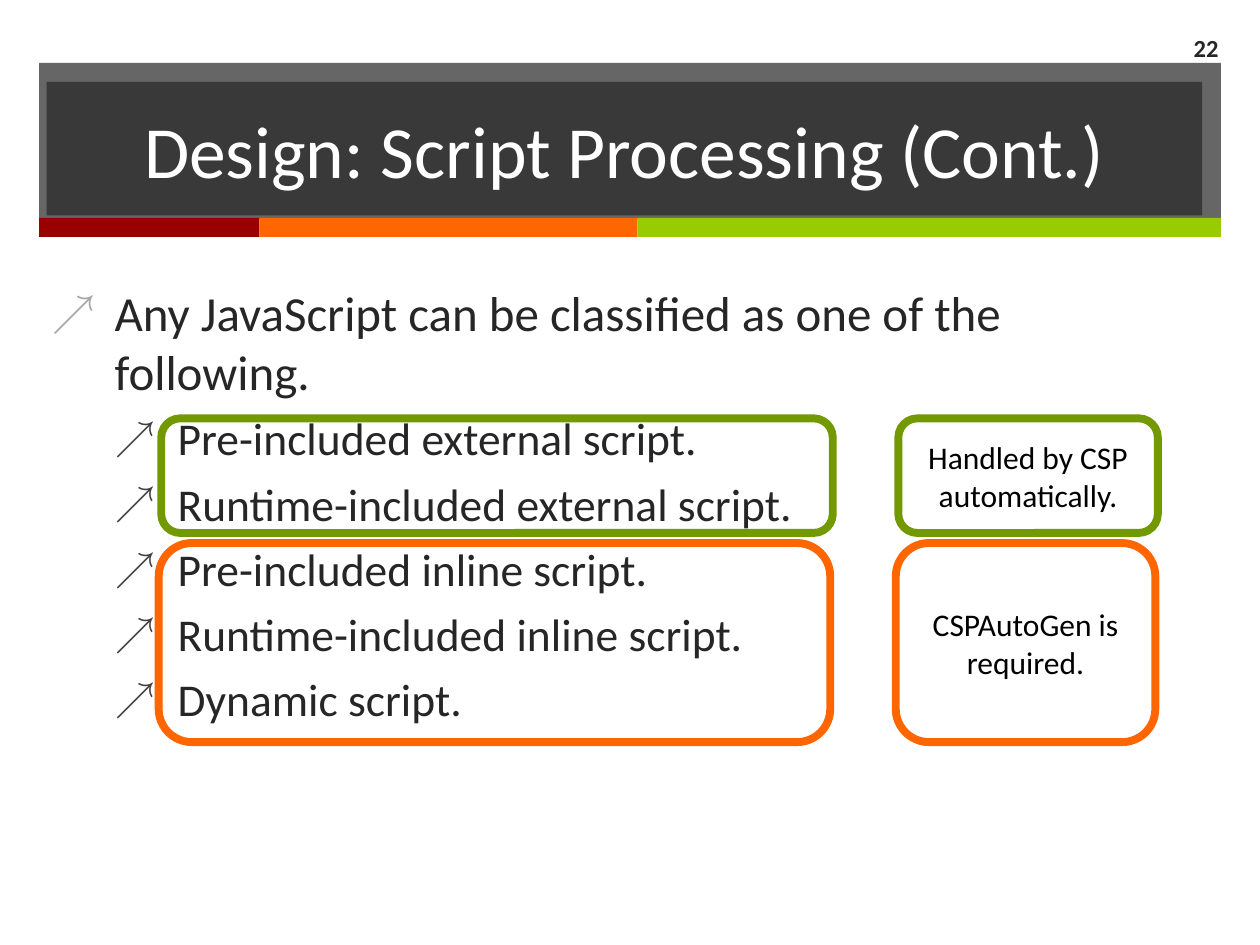
from lxml import etree
from pptx import Presentation
from pptx.dml.color import RGBColor
from pptx.enum.shapes import MSO_SHAPE
from pptx.enum.text import MSO_ANCHOR, MSO_AUTO_SIZE, PP_ALIGN
from pptx.oxml.ns import qn
from pptx.util import Inches, Pt

RECTANGLE, ROUNDED = MSO_SHAPE.RECTANGLE, MSO_SHAPE.ROUNDED_RECTANGLE
MIDDLE, TOP = MSO_ANCHOR.MIDDLE, MSO_ANCHOR.TOP
CENTER, LEFT, RIGHT = PP_ALIGN.CENTER, PP_ALIGN.LEFT, PP_ALIGN.RIGHT
NO_FIT = MSO_AUTO_SIZE.NONE

FONT = "Calibri"
INK = RGBColor(0x26, 0x26, 0x26)
WHITE = RGBColor(0xFF, 0xFF, 0xFF)
BLACK = RGBColor(0x00, 0x00, 0x00)
RED = RGBColor(0x99, 0x00, 0x00)
ORANGE = RGBColor(0xFF, 0x66, 0x00)
LIME = RGBColor(0x99, 0xCC, 0x00)
GREEN = RGBColor(0x73, 0x99, 0x00)
PALE_BULLET = RGBColor(0xA6, 0xA6, 0xA6)
DARK_BULLET = RGBColor(0x40, 0x40, 0x40)

INTRO = "Any JavaScript can be classified as one of the following."
SCRIPT_KINDS = [
    "Pre-included external script.",
    "Runtime-included external script.",
    "Pre-included inline script.",
    "Runtime-included inline script.",
    "Dynamic script.",
]


def place(shape, left, top, width, height):
    shape.left, shape.top = Inches(left), Inches(top)
    shape.width, shape.height = Inches(width), Inches(height)


def set_frame(shape, anchor):
    frame = shape.text_frame
    frame.word_wrap = True
    frame.auto_size = NO_FIT
    frame.vertical_anchor = anchor
    return frame


def style_paragraph(para, size, color, align, bold=False):
    para.alignment = align
    para.font.name = FONT
    para.font.size = Pt(size)
    para.font.bold = bold
    para.font.color.rgb = color


def fill_translucent(shape):
    """Fill with the ink colour at 70 % opacity."""
    shape.fill.solid()
    shape.fill.fore_color.rgb = INK
    color = shape.fill._xPr.find(qn("a:solidFill"))[0]
    etree.SubElement(color, qn("a:alpha"), val="70000")


def add_block(page, kind, left, top, width, height):
    block = page.shapes.add_shape(
        kind, Inches(left), Inches(top), Inches(width), Inches(height))
    block.shadow.inherit = False
    return block


def add_header(page, left, top, width, height):
    band = add_block(page, RECTANGLE, left, top, width, height)
    fill_translucent(band)
    band.line.fill.background()

    stripe_left = left
    for stripe_width, color in ((1.75, RED), (3, ORANGE), (width - 4.75, LIME)):
        stripe = add_block(page, RECTANGLE, stripe_left, top + 1.23,
                           stripe_width, 0.15)
        stripe.fill.solid()
        stripe.fill.fore_color.rgb = color
        stripe.line.fill.background()
        stripe_left += stripe_width

    title = page.shapes.title
    title.element.getparent().append(title.element)  # in front of the band
    place(title, left + 0.06, top + 0.15, width - 0.21, height - 0.18)
    fill_translucent(title)
    frame = set_frame(title, MIDDLE)
    frame.text = "Design: Script Processing (Cont.)"
    style_paragraph(frame.paragraphs[0], 42, WHITE, CENTER)


def set_bullet(para, margin, color):
    properties = para._p.get_or_add_pPr()
    properties.set("marL", str(Inches(margin)))
    properties.set("indent", str(Inches(-0.5)))
    bullet_color = etree.SubElement(properties, qn("a:buClr"))
    etree.SubElement(bullet_color, qn("a:srgbClr"), val=str(color))
    etree.SubElement(properties, qn("a:buSzPct"), val="90000")
    etree.SubElement(properties, qn("a:buChar"), char="↗")


def fill_list(page, left, top, width, height):
    body = page.placeholders[1]
    place(body, left, top, width, height)
    frame = set_frame(body, TOP)
    frame.text = "\n".join([INTRO] + SCRIPT_KINDS)
    for index, para in enumerate(frame.paragraphs):
        nested = index > 0
        para.level = int(nested)
        set_bullet(para, 1 if nested else 0.5,
                   DARK_BULLET if nested else PALE_BULLET)
        para.space_before = Pt(6 if nested else 0)
        style_paragraph(para, 26 if nested else 28, INK, LEFT)


def add_outline(page, color, left, top, width, height):
    outline = add_block(page, ROUNDED, left, top, width, height)
    outline.fill.background()
    outline.line.color.rgb = color
    outline.line.width = Pt(4.5)
    return outline


def add_group_marker(page, color, note, left, top, height):
    """Outline some list items and explain them in a box to the right."""
    add_outline(page, color, left, top, 5.33, height)
    note_box = add_outline(page, color, left + 5.85, top, 2.06, height)
    frame = set_frame(note_box, MIDDLE)
    frame.text = note
    style_paragraph(frame.paragraphs[0], 18, BLACK, CENTER)


def add_page_number(page, left, top, width, height):
    box = page.shapes.add_textbox(
        Inches(left), Inches(top), Inches(width), Inches(height))
    frame = set_frame(box, MIDDLE)
    frame.text = "22"
    style_paragraph(frame.paragraphs[0], 14, INK, RIGHT, bold=True)


def main():
    deck = Presentation()
    deck.slide_width, deck.slide_height = Inches(10), Inches(7.5)
    page = deck.slides.add_slide(deck.slide_layouts[1])
    add_header(page, 0.31, 0.5, 9.38, 1.24)
    fill_list(page, 0.31, 2.19, 9.07, 3.65)
    add_page_number(page, 9.08, 0.18, 0.69, 0.39)
    add_group_marker(page, GREEN, "Handled by CSP automatically.",
                     1.28, 3.32, 0.91)
    add_group_marker(page, ORANGE, "CSPAutoGen is required.",
                     1.26, 4.31, 1.58)
    deck.save("out.pptx")


if __name__ == "__main__":
    main()
